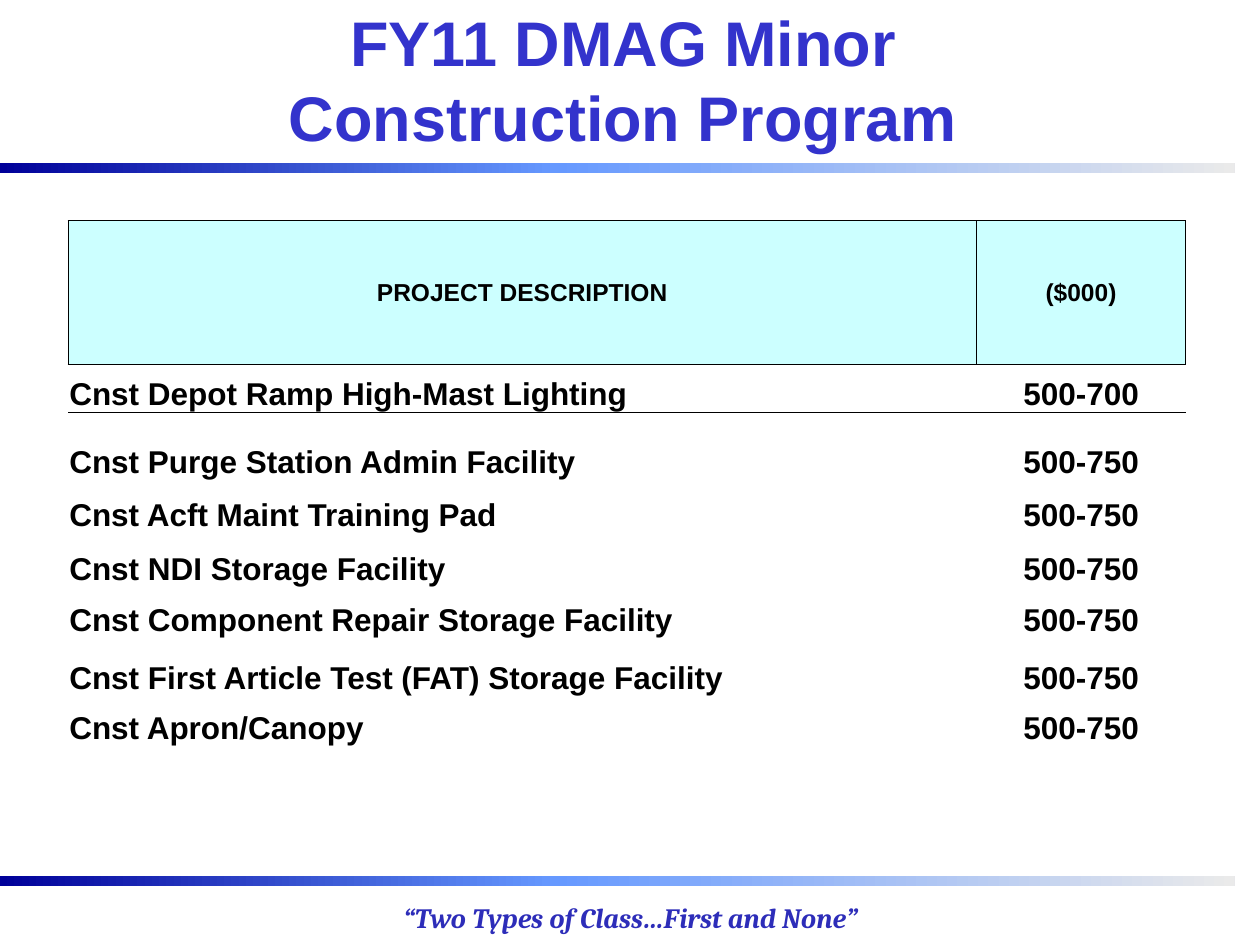
from lxml import etree
from pptx import Presentation
from pptx import util as u
from pptx.dml.color import RGBColor
from pptx.enum import shapes, text
from pptx.oxml.ns import qn

TITLE = "FY11 DMAG Minor Construction Program"
MOTTO = "“Two Types of Class…First and None”"
HEADER = ("PROJECT DESCRIPTION", "($000)")
# description, cost range, row height in inches
PROJECTS = [
    ("Cnst Depot Ramp High-Mast Lighting", "500-700", 0.38),
    ("Cnst Purge Station Admin Facility", "500-750", 0.54),
    ("Cnst Acft Maint Training Pad", "500-750", 0.42),
    ("Cnst NDI Storage Facility", "500-750", 0.43),
    ("Cnst Component Repair Storage Facility", "500-750", 0.41),
    ("Cnst First Article Test (FAT) Storage Facility", "500-750", 0.46),
    ("Cnst Apron/Canopy", "500-750", 0.39),
]
COLUMN_WIDTHS = (7.21, 1.66)
HEADER_HEIGHT = 1.14

BLACK = RGBColor(0x00, 0x00, 0x00)
TITLE_BLUE = RGBColor(0x33, 0x33, 0xCC)
MOTTO_BLUE = RGBColor(0x2D, 0x2D, 0xB9)
HEADER_CYAN = RGBColor(0xCC, 0xFF, 0xFF)
NAVY = RGBColor(0x00, 0x00, 0x99)
SKY = RGBColor(0x66, 0x99, 0xFF)
PALE = RGBColor(0xEA, 0xEA, 0xEA)

BAND_TOPS = (1.29, 6.95)
BAND_HEIGHT = 0.08
BAND_PARTS = [(0, 4.42, NAVY, SKY), (4.42, 5.38, SKY, PALE)]
NO_STYLE = "{2D5ABB26-0587-4C30-8999-92F81FD0307C}"


def write(frame, words, size, color, font="Arial", align=text.PP_ALIGN.CENTER, italic=False):
    paragraph = frame.paragraphs[0]
    paragraph.alignment = align
    run = paragraph.add_run()
    run.text = words
    run.font.name, run.font.size = font, u.Pt(size)
    run.font.bold, run.font.italic = True, italic
    run.font.color.rgb = color


def add_band(slide, left, top, width, start, end):
    band = slide.shapes.add_shape(
        shapes.MSO_SHAPE.RECTANGLE, u.Inches(left), u.Inches(top),
        u.Inches(width), u.Inches(BAND_HEIGHT))
    band.shadow.inherit = False
    band.line.fill.background()
    band.fill.gradient()
    band.fill.gradient_angle = 0
    for stop, color in zip(band.fill.gradient_stops, (start, end)):
        stop.color.rgb = color


def add_border(cell, sides):
    """Draw thin black lines on the given sides; call before filling the cell."""
    properties = cell._tc.get_or_add_tcPr()
    for side in sides:
        line = etree.SubElement(properties, qn(f"a:ln{side}"), w=str(u.Pt(0.5)))
        fill = etree.SubElement(line, qn("a:solidFill"))
        etree.SubElement(fill, qn("a:srgbClr"), val=str(BLACK))


def fill_cell(cell, words, size, align, anchor):
    cell.margin_left = cell.margin_right = cell.margin_top = u.Inches(0.01)
    cell.margin_bottom = 0
    cell.vertical_anchor = anchor
    write(cell.text_frame, words, size, BLACK, align=align)


def add_project_table(slide):
    heights = [HEADER_HEIGHT] + [height for _, _, height in PROJECTS]
    frame = slide.shapes.add_table(
        len(heights), len(COLUMN_WIDTHS), u.Inches(0.54), u.Inches(1.75),
        u.Inches(sum(COLUMN_WIDTHS)), u.Inches(sum(heights)))
    table = frame.table
    table.first_row = table.horz_banding = False
    table._tbl.tblPr.find(qn("a:tableStyleId")).text = NO_STYLE
    for column, width in zip(table.columns, COLUMN_WIDTHS):
        column.width = u.Inches(width)
    for row, height in zip(table.rows, heights):
        row.height = u.Inches(height)

    for cell, words in zip(table.rows[0].cells, HEADER):
        add_border(cell, "LRTB")
        cell.fill.solid()
        cell.fill.fore_color.rgb = HEADER_CYAN
        fill_cell(cell, words, 14, text.PP_ALIGN.CENTER, text.MSO_ANCHOR.MIDDLE)
    for index, (description, cost, _) in enumerate(PROJECTS, start=1):
        aligned = [(description, text.PP_ALIGN.LEFT), (cost, text.PP_ALIGN.CENTER)]
        for cell, (words, align) in zip(table.rows[index].cells, aligned):
            if index == 1:
                add_border(cell, "T")
            cell.fill.background()
            fill_cell(cell, words, 18, align, text.MSO_ANCHOR.BOTTOM)


def main():
    presentation = Presentation()
    presentation.slide_width, presentation.slide_height = u.Inches(10), u.Inches(7.5)
    slide = presentation.slides.add_slide(presentation.slide_layouts[5])

    for top in BAND_TOPS:
        for left, width, start, end in BAND_PARTS:
            add_band(slide, left, top, width, start, end)

    title = slide.shapes.title
    title.left, title.top = u.Inches(1.07), 0
    title.width, title.height = u.Inches(7.75), u.Inches(1.25)
    title.text_frame.vertical_anchor = text.MSO_ANCHOR.MIDDLE
    write(title.text_frame, TITLE, 36, TITLE_BLUE)

    add_project_table(slide)

    motto = slide.shapes.add_textbox(
        u.Inches(1.42), u.Inches(7.1), u.Inches(7.17), u.Inches(0.37))
    motto.text_frame.word_wrap = True
    write(motto.text_frame, MOTTO, 16, MOTTO_BLUE, font="Cambria", italic=True)

    presentation.save("out.pptx")


if __name__ == "__main__":
    main()
